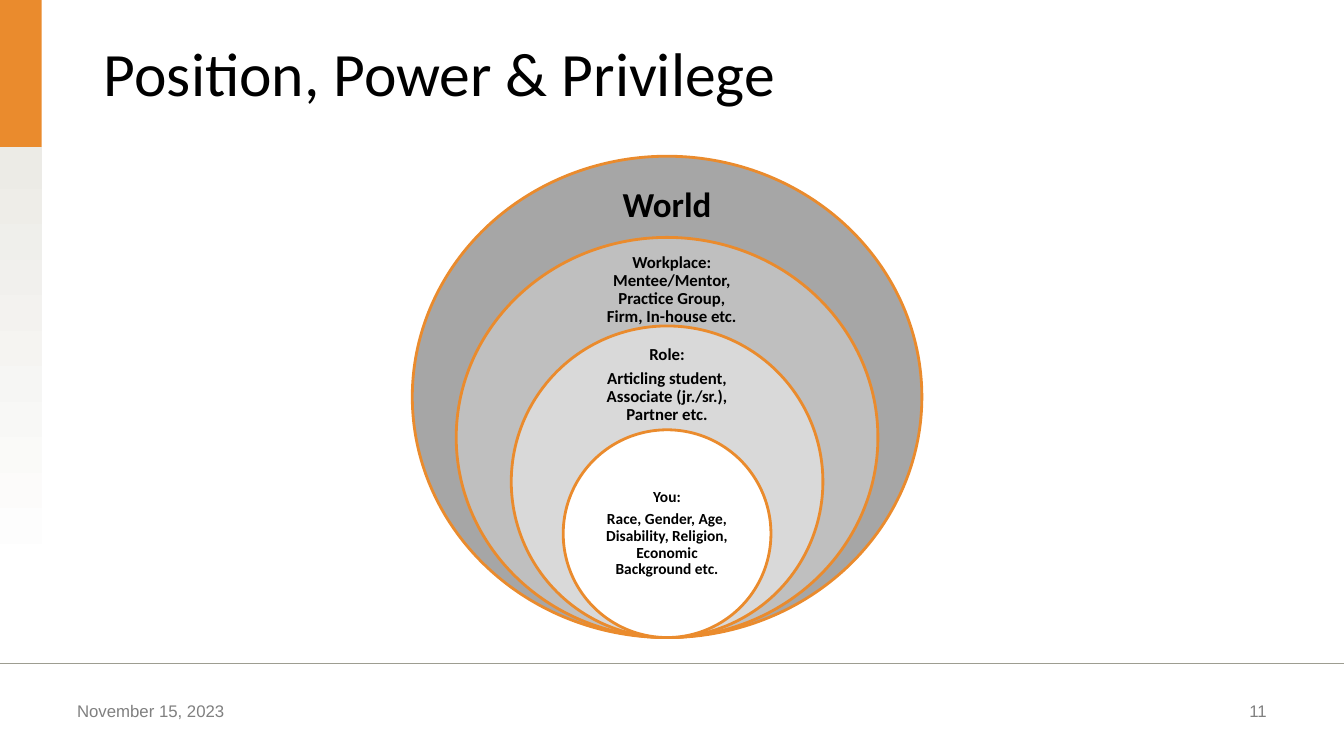
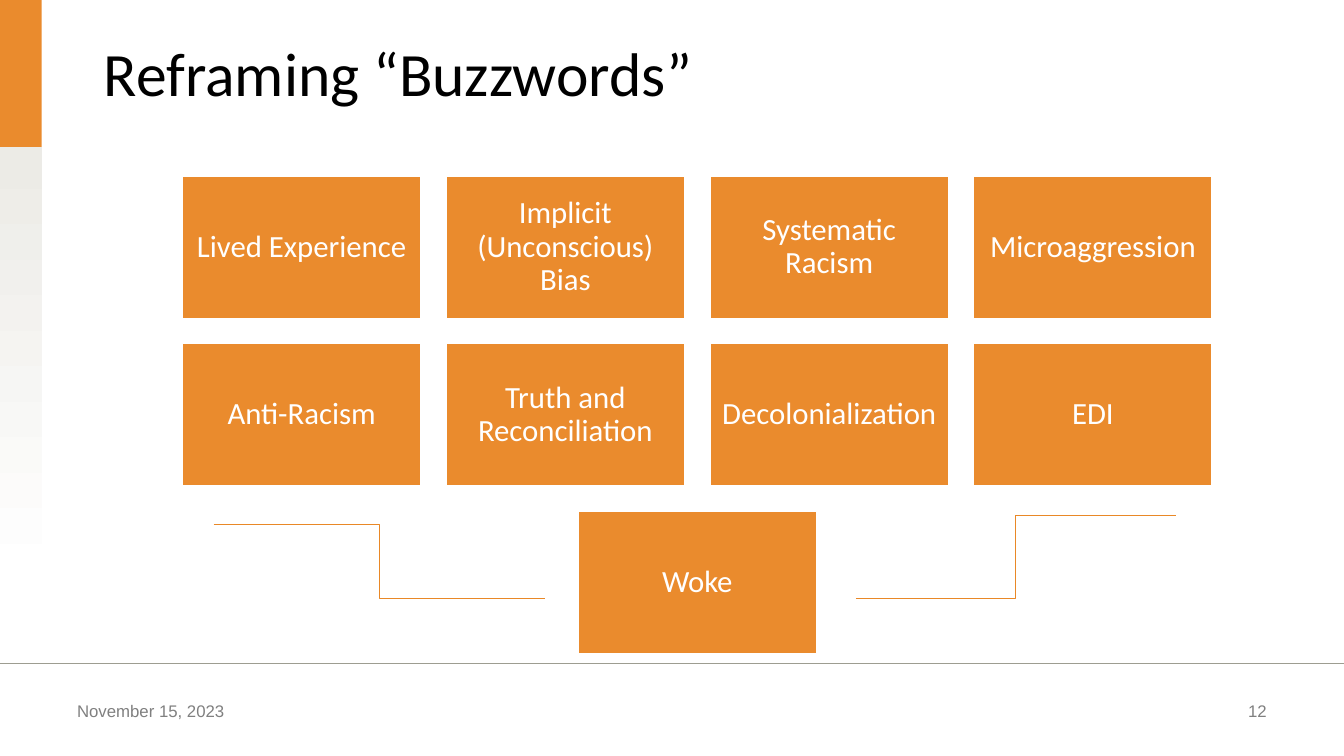
from lxml import etree
from pptx import Presentation
from pptx.dml.color import RGBColor
from pptx.enum import shapes, text
from pptx.oxml.ns import qn
from pptx.util import Pt

COLORS = {"orange": "EA8B2D", "connector": "E98827", "rule": "9D9D91", "footer": "808080",
          "band": "ECEBE6", "white": "FFFFFF", "black": "000000",
          "world": "A6A6A6", "workplace": "BFBFBF", "role": "D9D9D9", "you": "FFFFFF"}

WIDTH, HEIGHT = 960, 540
BAND_WIDTH, BAND_SPLIT = 29.8, 105
RULE_TOP = 474
FOOTER_LEFT, FOOTER_TOP, FOOTER_WIDTH, FOOTER_HEIGHT = 48, 497, 224, 28.8
DATE = "November 15, 2023"

POWER_TITLE, POWER_NUMBER = "Position, Power & Privilege", 11
RING_CENTER, RING_BOTTOM = 476.5, 455.4
# colour, ring size, text box (centre, top, width, height), inset, font size, paragraphs
RINGS = [
    ("world", (364, 343.8), (476.5, 121, 101.5, 52), 13.7, 25, ["World"]),
    ("workplace", (301.2, 285.8), (479.9, 178, 114.5, 58.2), 6.5, 12,
     ["Workplace: Mentee/Mentor, Practice Group, Firm, In-house etc."]),
    ("role", (222.6, 222.6), (476.5, 249.8, 103.7, 50.4), 6.5, 12,
     ["Role:", "Articling student, Associate (jr./sr.), Partner etc."]),
    ("you", (148.4, 148.4), (476.5, 344.2, 105.1, 74.2), 6.5, 11,
     ["You:", "Race, Gender, Age, Disability, Religion, Economic Background etc."]),
]

WORDS_TITLE, WORDS_NUMBER = "Reframing “Buzzwords”", 12
WORD_ROWS = [
    ["Lived Experience", "Implicit (Unconscious) Bias", "Systematic Racism", "Microaggression"],
    ["Anti-Racism", "Truth and Reconciliation", "Decolonialization", "EDI"],
    ["Woke"],
]
GRID_LEFT, GRID_TOP, GRID_GAP = 129.8, 125.1, 17.1
TILE_WIDTH, TILE_HEIGHT = 171.3, 102.8
ELBOWS = [((152.6, 374.4), (389.5, 427.4)), ((611.3, 427.4), (839.8, 368.6))]


def color(name):
    return RGBColor.from_string(COLORS[name])


def add_figure(page, kind, left, top, width, height, fill, line=None):
    figure = page.shapes.add_shape(kind, Pt(left), Pt(top), Pt(width), Pt(height))
    figure.shadow.inherit = False
    figure.fill.solid()
    figure.fill.fore_color.rgb = color(fill)
    if line:
        figure.line.color.rgb = color(line)
        figure.line.width = Pt(2)
    else:
        figure.line.fill.background()
    return figure


def add_line(page, kind, start, end, line, width):
    connector = page.shapes.add_connector(kind, *(Pt(value) for value in start + end))
    connector.line.color.rgb = color(line)
    connector.line.width = Pt(width)
    etree.SubElement(connector.element.spPr, qn("a:effectLst"))
    return connector


def style_text(frame, size, ink, align, font="Calibri", bold=False):
    frame.word_wrap = True
    for para in frame.paragraphs:
        para.alignment = align
        for span in para.runs:
            span.font.name, span.font.size, span.font.bold = font, Pt(size), bold
            span.font.color.rgb = color(ink)


def set_centered_text(frame, paragraphs, size, ink, inset, bold=False):
    frame.text = "\n".join(paragraphs)
    frame.vertical_anchor = text.MSO_ANCHOR.MIDDLE
    frame.margin_left = frame.margin_right = frame.margin_top = frame.margin_bottom = Pt(inset)
    style_text(frame, size, ink, text.PP_ALIGN.CENTER, bold=bold)
    for para in frame.paragraphs:
        para.line_spacing = 0.9
        para.space_after = Pt(round(0.35 * size, 1))


def add_footer(page, left, words, align):
    box = page.shapes.add_textbox(Pt(left), Pt(FOOTER_TOP), Pt(FOOTER_WIDTH), Pt(FOOTER_HEIGHT))
    box.text_frame.text = words
    style_text(box.text_frame, 12, "footer", align, font="Arial")
    return box


def furnish_layout(layout, page):
    """Draw the shared parts on a page, then move them to its layout."""
    rectangle = shapes.MSO_SHAPE.RECTANGLE
    band = add_figure(page, rectangle, 0, BAND_SPLIT, BAND_WIDTH, HEIGHT - BAND_SPLIT, "band")
    band.fill.gradient()
    band.fill.gradient_angle = 90
    for stop, position, name in zip(band.fill.gradient_stops, (0.29, 0.99), ("white", "band")):
        stop.position = position
        stop.color.rgb = color(name)
    parts = [
        band,
        add_footer(page, FOOTER_LEFT, DATE, text.PP_ALIGN.LEFT),
        add_line(page, shapes.MSO_CONNECTOR.STRAIGHT, (0, RULE_TOP), (WIDTH, RULE_TOP), "rule", 0.75),
        add_figure(page, rectangle, 0, 0, BAND_WIDTH, BAND_SPLIT, "orange"),
    ]
    for number, part in enumerate(parts, 100):
        part.element.xpath(".//p:cNvPr")[0].set("id", str(number))
        layout.shapes.element.append(part.element)


def set_heading(page, title, number):
    heading = page.shapes.title
    heading.left, heading.top, heading.width, heading.height = Pt(67), Pt(21.6), Pt(820), Pt(60.5)
    heading.text_frame.text = title
    heading.text_frame.auto_size = text.MSO_AUTO_SIZE.NONE
    heading.text_frame.vertical_anchor = text.MSO_ANCHOR.TOP
    style_text(heading.text_frame, 44, "black", text.PP_ALIGN.LEFT)
    add_footer(page, WIDTH - FOOTER_LEFT - FOOTER_WIDTH, str(number), text.PP_ALIGN.RIGHT)


def draw_rings(page):
    for name, (width, height), (center, top, box_width, box_height), inset, size, words in RINGS:
        add_figure(page, shapes.MSO_SHAPE.OVAL, RING_CENTER - width / 2, RING_BOTTOM - height,
                   width, height, name, "orange")
        box = page.shapes.add_textbox(Pt(center - box_width / 2), Pt(top),
                                      Pt(box_width), Pt(box_height))
        set_centered_text(box.text_frame, words, size, "black", inset, bold=True)


def draw_buzzwords(page):
    step_x, step_y = TILE_WIDTH + GRID_GAP, TILE_HEIGHT + GRID_GAP
    columns = max(len(row) for row in WORD_ROWS)
    for row_index, row in enumerate(WORD_ROWS):
        row_left = GRID_LEFT + (columns - len(row)) * step_x / 2
        for column, word in enumerate(row):
            tile = add_figure(page, shapes.MSO_SHAPE.RECTANGLE, row_left + column * step_x,
                              GRID_TOP + row_index * step_y, TILE_WIDTH, TILE_HEIGHT,
                              "orange", "white")
            set_centered_text(tile.text_frame, [word], 22, "white", 6.5)
    for start, end in ELBOWS:
        add_line(page, shapes.MSO_CONNECTOR.ELBOW, start, end, "connector", 0.75)


def main():
    deck = Presentation()
    deck.slide_width, deck.slide_height = Pt(WIDTH), Pt(HEIGHT)
    layout = deck.slide_layouts[5]
    power_page, words_page = (deck.slides.add_slide(layout) for _ in range(2))
    furnish_layout(layout, power_page)
    set_heading(power_page, POWER_TITLE, POWER_NUMBER)
    draw_rings(power_page)
    set_heading(words_page, WORDS_TITLE, WORDS_NUMBER)
    draw_buzzwords(words_page)
    deck.save("out.pptx")


if __name__ == "__main__":
    main()
